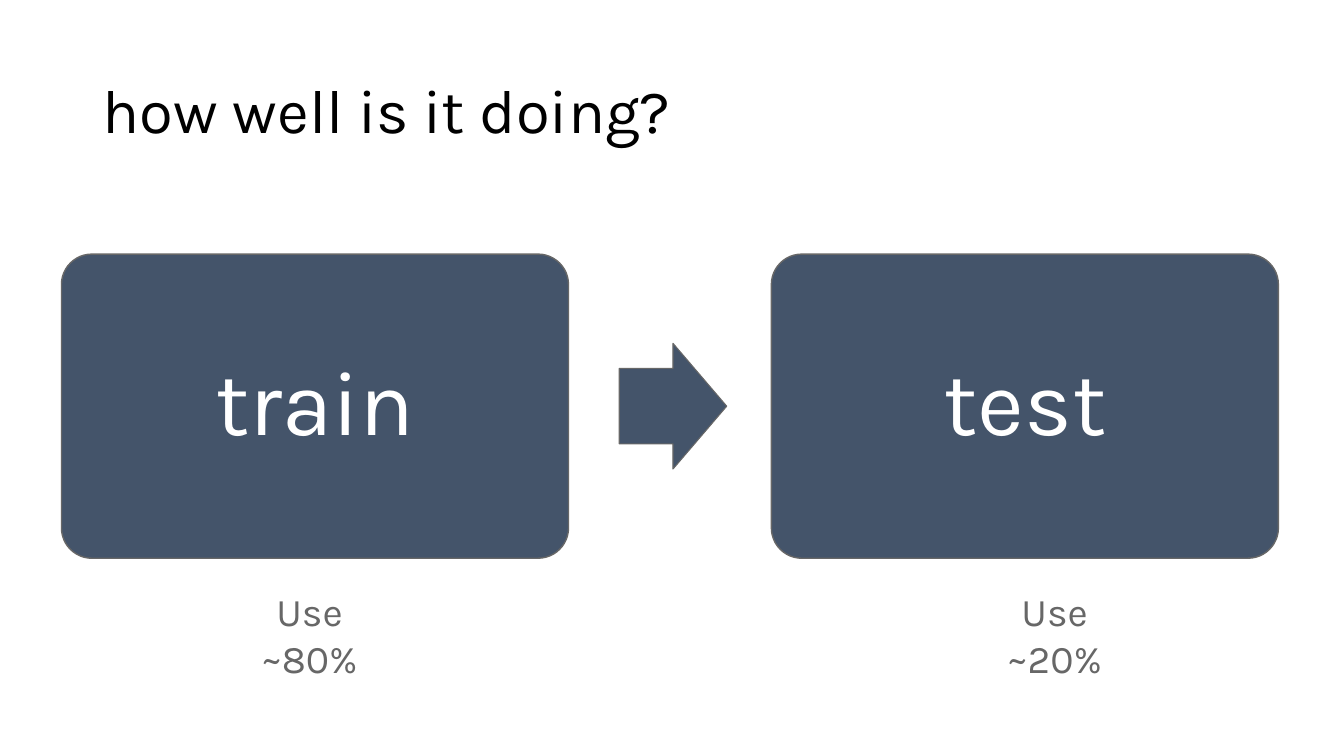
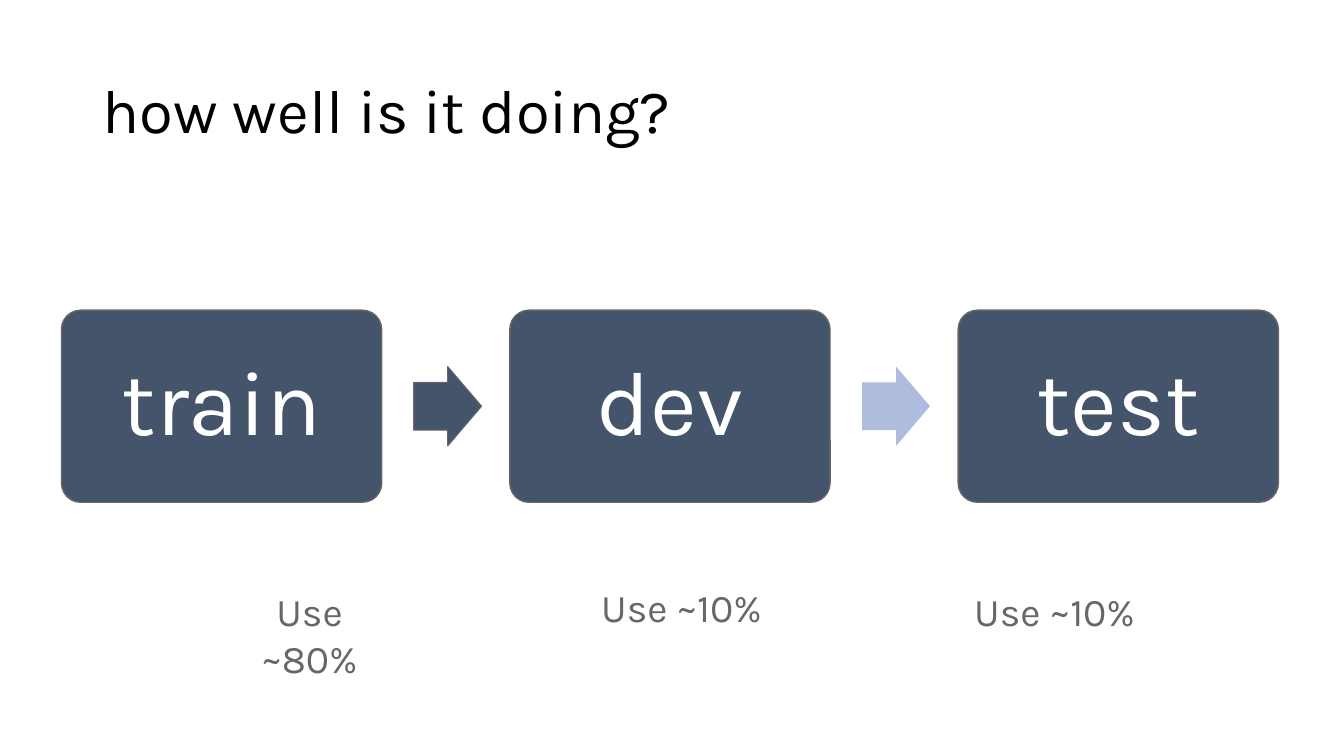
from pptx import Presentation
from pptx.dml.color import RGBColor
from pptx.enum.shapes import MSO_SHAPE as Shape
from pptx.enum.text import MSO_ANCHOR as Anchor, MSO_AUTO_SIZE as Fit, PP_ALIGN as Align
from pptx.util import Inches, Pt

FONT = "Karla"
BLACK, WHITE, GREY = "000000", "FFFFFF", "676767"
NAVY, PALE = "44546A", "B0BCDE"
LEFT, SPAN, MID = 0.61, 12.07, 4.03


def color(code):
    """Turn a hex string into a colour."""
    return RGBColor.from_string(code)


def write(frame, text, size, code, align=Align.CENTER, lead=1.0):
    """Set and format one paragraph of text."""
    frame.text = text
    frame.word_wrap = True
    para = frame.paragraphs[0]
    para.alignment = align
    para.line_spacing = lead
    font = para.runs[0].font
    font.name, font.size = FONT, Pt(size)
    font.color.rgb = color(code)


def add_title(slide, text):
    """Place and format the slide title."""
    title = slide.shapes.title
    title.left, title.top = Inches(0.92), Inches(0.4)
    title.width, title.height = Inches(11.5), Inches(1.45)
    frame = title.text_frame
    write(frame, text, 44, BLACK, Align.LEFT, 0.9)
    frame.auto_size = Fit.NONE
    frame.vertical_anchor = Anchor.MIDDLE


def add_block(slide, kind, left, width, height, fill, line, weight):
    """Draw a filled shape centred on the flow axis."""
    block = slide.shapes.add_shape(
        kind, Inches(left), Inches(MID - height / 2), Inches(width), Inches(height))
    block.shadow.inherit = False
    block.fill.solid()
    block.fill.fore_color.rgb = color(fill)
    if line:
        block.line.color.rgb = color(line)
        block.line.width = Pt(weight)
    else:
        block.line.fill.background()
    return block


def add_card(slide, text, left, width):
    """Draw a rounded card with its label."""
    card = add_block(slide, Shape.ROUNDED_RECTANGLE, left, width, 0.6 * width, NAVY, GREY, 1)
    card.adjustments[0] = 0.1
    frame = card.text_frame
    frame.margin_left = frame.margin_right = Inches(0.27)
    frame.margin_top = frame.margin_bottom = Inches(0.27)
    frame.vertical_anchor = Anchor.MIDDLE
    write(frame, text, 65, WHITE, lead=0.9)


def add_arrow(slide, left, card, fill, line):
    """Draw an arrow scaled to the card width."""
    arrow = add_block(slide, Shape.RIGHT_ARROW, left, 0.212 * card, 0.248 * card,
                      fill, line, 0.75)
    arrow.adjustments[0], arrow.adjustments[1] = 0.6, 0.5


def add_flow(slide, names, arrows):
    """Spread cards over the span with arrows in the gaps."""
    width = SPAN / (1 + 1.4 * (len(names) - 1))
    lefts = [LEFT + 1.4 * width * step for step in range(len(names))]
    for name, left in zip(names, lefts):
        add_card(slide, name, left, width)
    for left, (fill, line) in zip(lefts, arrows):
        add_arrow(slide, left + 1.1 * width, width, fill, line)


def add_note(slide, text, center, top, width):
    """Add a caption centred on the given position."""
    box = slide.shapes.add_textbox(
        Inches(center - width / 2), Inches(top), Inches(width), Inches(0.57))
    write(box.text_frame, text, 28, GREY)


def add_slide(deck, names, arrows, notes):
    """Build one slide of the split diagram."""
    slide = deck.slides.add_slide(deck.slide_layouts[5])
    add_title(slide, "how well is it doing?")
    add_flow(slide, names, arrows)
    for note in notes:
        add_note(slide, *note)


def main():
    """Build and save the deck."""
    deck = Presentation()
    deck.slide_width, deck.slide_height = Inches(13.33), Inches(7.5)
    dark, light = (NAVY, GREY), (PALE, None)
    train = ("Use ~80%", 3.07, 5.78, 1.8)
    add_slide(deck, ["train", "test"], [dark],
              [train, ("Use ~20%", 10.46, 5.78, 1.8)])
    add_slide(deck, ["train", "dev", "test"], [dark, light],
              [train, ("Use ~10%", 10.46, 5.78, 1.9), ("Use ~10%", 6.76, 5.74, 1.9)])
    deck.save("out.pptx")


if __name__ == "__main__":
    main()
